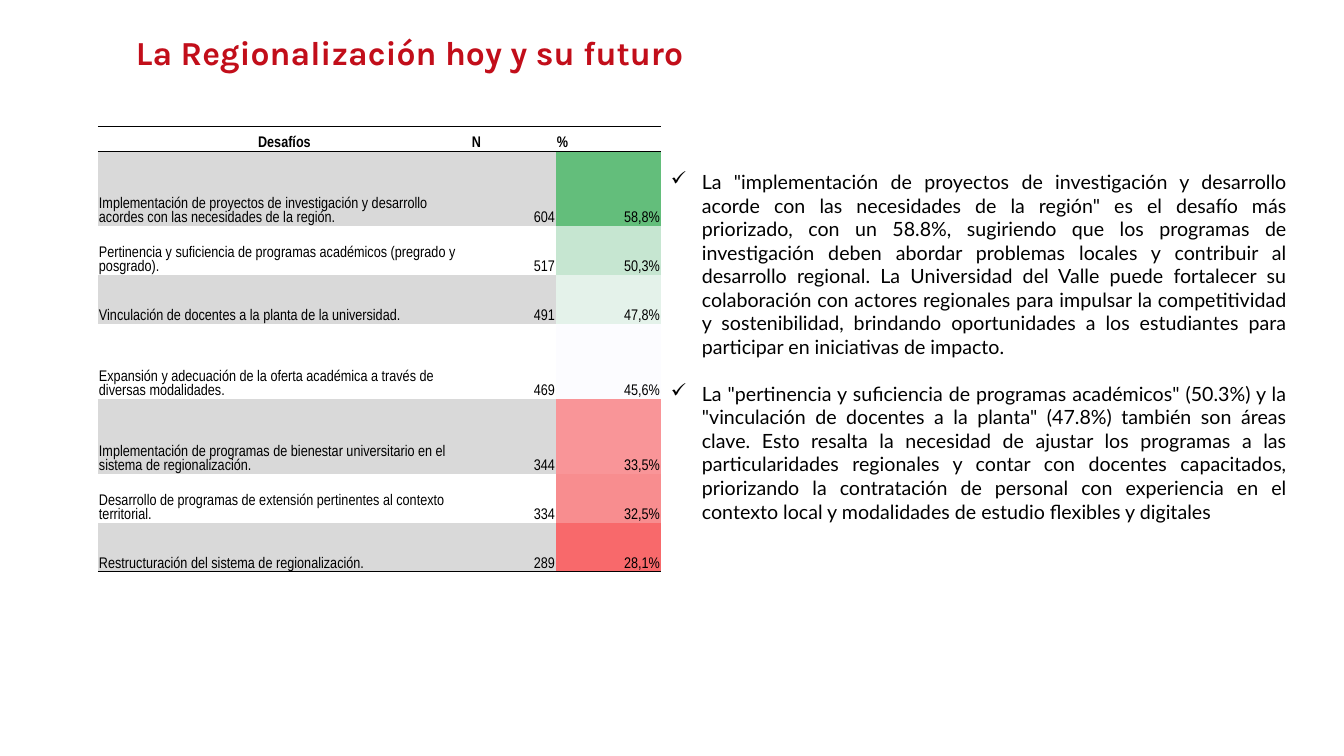
from dataclasses import dataclass

from lxml.etree import SubElement
from pptx import Presentation
from pptx.dml.color import RGBColor
from pptx.enum.text import MSO_AUTO_SIZE as AutoSize, MSO_ANCHOR as Anchor, PP_ALIGN as Align
from pptx.oxml.ns import qn
from pptx.util import Emu, Pt


@dataclass(frozen=True)
class Theme:
    title_color: str = "C20E1A"
    ink: str = "000000"
    band: str = "D9D9D9"
    title_font: str = "Karla"
    table_font: str = "Arial Narrow"
    body_font: str = "Lato"
    title_size: float = 24
    table_size: float = 11
    body_size: float = 14
    paragraph_gap: float = 16.8
    rule_width: float = 0.5


THEME = Theme()
EMU_PER_PX = 914400 / 100.8

HEADERS = ("Desafíos", "N", "%")
CHALLENGES = [
    ("Implementación de proyectos de investigación y desarrollo acordes con las necesidades de la región.",
     "604", "58,8%", "63BE7B", 75),
    ("Pertinencia y suficiencia de programas académicos (pregrado y posgrado).",
     "517", "50,3%", "C6E6D1", 49),
    ("Vinculación de docentes a la planta de la universidad.",
     "491", "47,8%", "E4F2EA", 49),
    ("Expansión y adecuación de la oferta académica a través de diversas modalidades.",
     "469", "45,6%", "FCFCFF", 75),
    ("Implementación de programas de bienestar universitario en el sistema de regionalización.",
     "344", "33,5%", "F99598", 75),
    ("Desarrollo de programas de extensión pertinentes al contexto territorial.",
     "334", "32,5%", "F88D8F", 49),
    ("Restructuración del sistema de regionalización.",
     "289", "28,1%", "F8696B", 49),
]
FINDINGS = [
    'La "implementación de proyectos de investigación y desarrollo acorde con las necesidades de la región" '
    "es el desafío más priorizado, con un 58.8%, sugiriendo que los programas de investigación deben abordar "
    "problemas locales y contribuir al desarrollo regional. La Universidad del Valle puede fortalecer su "
    "colaboración con actores regionales para impulsar la competitividad y sostenibilidad, brindando "
    "oportunidades a los estudiantes para participar en iniciativas de impacto.",
    'La "pertinencia y suficiencia de programas académicos" (50.3%) y la "vinculación de docentes a la planta" '
    "(47.8%) también son áreas clave. Esto resalta la necesidad de ajustar los programas a las particularidades "
    "regionales y contar con docentes capacitados, priorizando la contratación de personal con experiencia en "
    "el contexto local y modalidades de estudio flexibles y digitales",
]


def px(length):
    return Emu(round(length * EMU_PER_PX))


def apply_format(target, values):
    for name, value in values.items():
        setattr(target, name, value)


def style_font(font, name, size, color, bold=False):
    apply_format(font, {"name": name, "size": Pt(size), "bold": bold})
    font.color.rgb = RGBColor.from_string(color)


def add_text_frame(slide, left, top, width, height):
    shape = slide.shapes.add_textbox(px(left), px(top), px(width), px(height))
    apply_format(shape.text_frame, {"word_wrap": True, "auto_size": AutoSize.SHAPE_TO_FIT_TEXT})
    return shape.text_frame


def add_title(slide, text):
    paragraph = add_text_frame(slide, 126, 27, 929, 50).paragraphs[0]
    paragraph.text = text
    style_font(paragraph.font, THEME.title_font, THEME.title_size, THEME.title_color, True)


def set_borders(cell, ruled_sides):
    properties = cell._tc.get_or_add_tcPr()
    for side in "LRTB":
        line = SubElement(properties, qn(f"a:ln{side}"), w=str(Pt(THEME.rule_width)))
        if side in ruled_sides:
            fill = SubElement(line, qn("a:solidFill"))
            SubElement(fill, qn("a:srgbClr"), val=THEME.ink)
        else:
            SubElement(line, qn("a:noFill"))


def write_cell(cell, text, alignment, bold, fill, ruled_sides):
    apply_format(cell, {
        "vertical_anchor": Anchor.BOTTOM,
        "margin_left": px(1), "margin_right": px(1),
        "margin_top": px(1), "margin_bottom": 0,
    })
    set_borders(cell, ruled_sides)
    if fill:
        cell.fill.solid()
        cell.fill.fore_color.rgb = RGBColor.from_string(fill)
    else:
        cell.fill.background()
    paragraph = cell.text_frame.paragraphs[0]
    apply_format(paragraph, {"text": text, "alignment": alignment})
    style_font(paragraph.font, THEME.table_font, THEME.table_size, THEME.ink, bold)


def add_challenge_table(slide):
    widths = (373, 85, 105)
    heights = [25] + [challenge[-1] for challenge in CHALLENGES]
    shape = slide.shapes.add_table(len(heights), len(widths), px(98), px(126),
                                   px(sum(widths)), px(sum(heights)))
    table = shape.table
    apply_format(table, {"first_row": False, "horz_banding": False})
    for column, width in zip(table.columns, widths):
        column.width = px(width)
    for row, height in zip(table.rows, heights):
        row.height = px(height)

    for column, header in enumerate(HEADERS):
        alignment = Align.LEFT if column else Align.CENTER
        write_cell(table.cell(0, column), header, alignment, True, None, "TB")
    for row, (name, count, share, heat, _) in enumerate(CHALLENGES, 1):
        band = THEME.band if row % 2 else None
        ruled_sides = {1: "T", len(CHALLENGES): "B"}.get(row, "")
        for column, (text, fill) in enumerate(((name, band), (count, band), (share, heat))):
            alignment = Align.RIGHT if column else Align.LEFT
            write_cell(table.cell(row, column), text, alignment, False, fill, ruled_sides)


def set_check_bullet(paragraph, indent):
    properties = paragraph._p.get_or_add_pPr()
    properties.set("marL", str(px(indent)))
    properties.set("indent", str(-px(indent)))
    SubElement(properties, qn("a:buChar"), char="✓")


def add_findings(slide):
    frame = add_text_frame(slide, 661, 165, 636, 367)
    for index, text in enumerate(FINDINGS):
        paragraph = frame.add_paragraph() if index else frame.paragraphs[0]
        set_check_bullet(paragraph, 31)
        apply_format(paragraph, {"text": text, "alignment": Align.JUSTIFY})
        if index:
            paragraph.space_before = Pt(THEME.paragraph_gap)
        style_font(paragraph.font, THEME.body_font, THEME.body_size, THEME.ink)


def main():
    presentation = Presentation()
    apply_format(presentation, {"slide_width": px(1344), "slide_height": px(756)})
    slide = presentation.slides.add_slide(presentation.slide_layouts[6])
    add_title(slide, "La Regionalización hoy y su futuro")
    add_challenge_table(slide)
    add_findings(slide)
    presentation.save("out.pptx")


if __name__ == "__main__":
    main()
